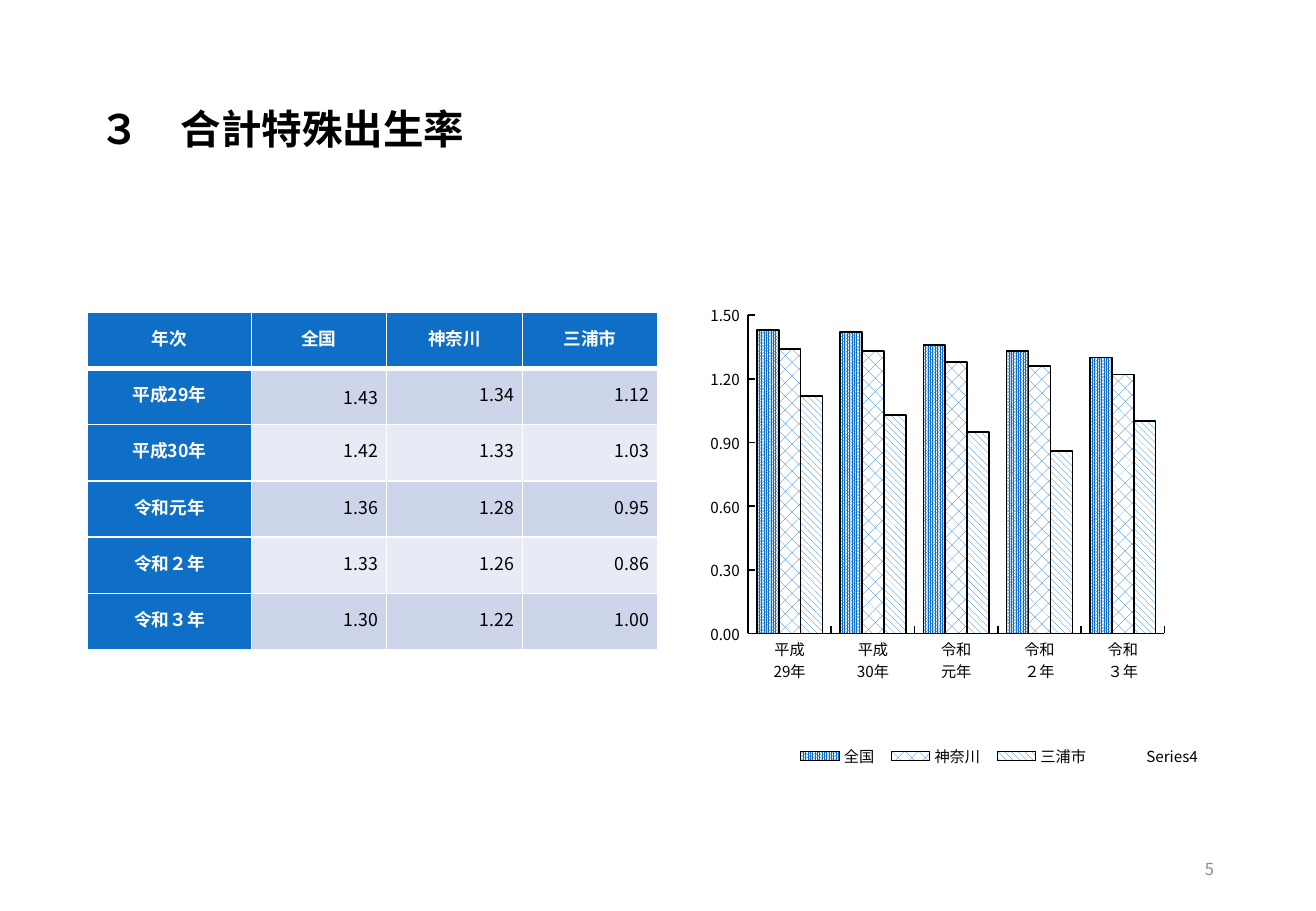
from lxml import etree
from pptx import Presentation
from pptx.chart.data import CategoryChartData
from pptx.dml.color import RGBColor
from pptx.enum.chart import XL_CHART_TYPE, XL_LEGEND_POSITION, XL_TICK_MARK
from pptx.enum.dml import MSO_PATTERN
from pptx.enum.text import MSO_ANCHOR, MSO_AUTO_SIZE, PP_ALIGN
from pptx.oxml import parse_xml
from pptx.oxml.ns import nsdecls, qn
from pptx.util import Inches, Pt

FONT = "Noto Sans CJK JP"
BLACK = RGBColor(0x00, 0x00, 0x00)
WHITE = RGBColor(0xFF, 0xFF, 0xFF)
GRAY = RGBColor(0x8C, 0x8C, 0x8C)
BLUE = RGBColor(0x0F, 0x6F, 0xC6)
BAND_DARK = RGBColor(0xCC, 0xD5, 0xEA)
BAND_LIGHT = RGBColor(0xE7, 0xEB, 0xF5)

LEFT, CENTER, RIGHT = PP_ALIGN.LEFT, PP_ALIGN.CENTER, PP_ALIGN.RIGHT
MIDDLE = MSO_ANCHOR.MIDDLE
NO_AUTOFIT = MSO_AUTO_SIZE.NONE
TICK_INSIDE, TICK_NONE = XL_TICK_MARK.INSIDE, XL_TICK_MARK.NONE
CLUSTERED = XL_CHART_TYPE.COLUMN_CLUSTERED
LEGEND_RIGHT = XL_LEGEND_POSITION.RIGHT
PATTERNS = [MSO_PATTERN.PERCENT_90, MSO_PATTERN.PERCENT_25,
            MSO_PATTERN.WIDE_DOWNWARD_DIAGONAL]

YEARS = ["平成29年", "平成30年", "令和元年", "令和２年", "令和３年"]
RATES = {
    "全国": [1.43, 1.42, 1.36, 1.33, 1.30],
    "神奈川": [1.34, 1.33, 1.28, 1.26, 1.22],
    "三浦市": [1.12, 1.03, 0.95, 0.86, 1.00],
}
EMPTY_SERIES = "Series4"

SECOND_AXES = f"""<c:plotArea {nsdecls("c")}>
<c:lineChart><c:grouping val="standard"/><c:varyColors val="0"/>
<c:marker val="1"/><c:axId val="5001"/><c:axId val="5002"/></c:lineChart>
<c:catAx><c:axId val="5001"/><c:scaling><c:orientation val="minMax"/></c:scaling>
<c:delete val="1"/><c:axPos val="b"/><c:crossAx val="5002"/></c:catAx>
<c:valAx><c:axId val="5002"/><c:scaling><c:orientation val="minMax"/></c:scaling>
<c:delete val="1"/><c:axPos val="r"/><c:crossAx val="5001"/><c:crosses val="max"/></c:valAx>
</c:plotArea>"""


def set_all(target, values):
    for name, value in values.items():
        setattr(target, name, value)


def manual_layout(x, y, w, h, inner=False):
    target = '<c:layoutTarget val="inner"/>' if inner else ""
    return parse_xml(
        f'<c:layout {nsdecls("c")}><c:manualLayout>{target}'
        '<c:xMode val="edge"/><c:yMode val="edge"/>'
        f'<c:x val="{x}"/><c:y val="{y}"/><c:w val="{w}"/><c:h val="{h}"/>'
        '</c:manualLayout></c:layout>')


def move_to_second_axis(plot_area, series):
    """Turn the bar series into a line series on hidden second axes."""
    line_chart, category_axis, value_axis = parse_xml(SECOND_AXES)
    for flag in series.findall(qn("c:invertIfNegative")):
        series.remove(flag)
    marker = parse_xml(f'<c:marker {nsdecls("c")}><c:symbol val="none"/></c:marker>')
    series.find(qn("c:spPr")).addnext(marker)
    etree.SubElement(series, qn("c:smooth"), val="0")
    line_chart.insert(2, series)
    plot_area.find(qn("c:barChart")).addnext(line_chart)
    plot_area.findall(qn("c:valAx"))[-1].addnext(category_axis)
    category_axis.addnext(value_axis)


class SlideBuilder:
    def __init__(self, slide):
        self.slide = slide

    def style(self, font, size, color=BLACK, bold=False):
        set_all(font, {"name": FONT, "size": Pt(size), "bold": bold})
        font.color.rgb = color
        etree.SubElement(font._rPr, qn("a:ea"), typeface=FONT)

    def add_text(self, frame, text, size, align, color=BLACK, bold=False):
        paragraph = frame.paragraphs[0]
        paragraph.alignment = align
        run = paragraph.add_run()
        run.text = text
        self.style(run.font, size, color, bold)
        return paragraph

    def title(self, text, left, top, width, height):
        heading = self.slide.shapes.title
        set_all(heading, {"left": left, "top": top, "width": width, "height": height})
        set_all(heading.text_frame, {"word_wrap": False, "auto_size": NO_AUTOFIT,
                                     "vertical_anchor": MIDDLE})
        self.add_text(heading.text_frame, text, 24, LEFT, bold=True)

    def page_number(self, text, left, top, width, height):
        frame = self.slide.shapes.add_textbox(left, top, width, height).text_frame
        set_all(frame, {"word_wrap": True, "vertical_anchor": MIDDLE})
        self.add_text(frame, text, 9.8, RIGHT, GRAY)

    def cell(self, cell, text, fill, is_header, borders):
        set_all(cell, {"margin_left": Inches(0.07), "margin_right": Inches(0.07),
                       "margin_top": 0, "margin_bottom": 0, "vertical_anchor": MIDDLE})
        properties = cell._tc.get_or_add_tcPr()
        for side, points in borders.items():
            properties.append(parse_xml(
                f'<a:ln{side} {nsdecls("a")} w="{Pt(points)}"><a:solidFill>'
                f'<a:srgbClr val="{WHITE}"/></a:solidFill></a:ln{side}>'))
        cell.fill.solid()
        cell.fill.fore_color.rgb = fill
        align, color = (CENTER, WHITE) if is_header else (RIGHT, BLACK)
        return self.add_text(cell.text_frame, text, 10.5, align, color, is_header)

    def rate_table(self, left, top, column_widths, height):
        rows = [["年次", *RATES]]
        for year, *rates in zip(YEARS, *RATES.values()):
            rows.append([year, *(f"{rate:.2f}" for rate in rates)])
        table = self.slide.shapes.add_table(
            len(rows), len(rows[0]), left, top, sum(column_widths), height).table
        for column, width in zip(table.columns, column_widths):
            column.width = width
        for r, row in enumerate(rows):
            band = BAND_DARK if r % 2 else BAND_LIGHT
            borders = {"L": 1, "R": 1, "T": 3 if r == 1 else 1, "B": 3 if r == 0 else 1}
            for c, text in enumerate(row):
                is_header = r == 0 or c == 0
                paragraph = self.cell(table.cell(r, c), text,
                                      BLUE if is_header else band, is_header, borders)
                if (r, c) != (1, 1):
                    paragraph.line_spacing = Pt(12)

    def outline(self, line, color):
        line.color.rgb = color
        line.width = Pt(1)

    def axis(self, axis, values):
        set_all(axis, {"has_major_gridlines": False, "major_tick_mark": TICK_INSIDE,
                       "minor_tick_mark": TICK_NONE, **values})
        self.outline(axis.format.line, BLACK)
        self.style(axis.tick_labels.font, 9)

    def rate_chart(self, left, top, width, height):
        data = CategoryChartData(number_format="0.00")
        data.categories = [f"{year[:2]}\n{year[2:]}" for year in YEARS]
        for name, rates in RATES.items():
            data.add_series(name, rates)
        data.add_series(EMPTY_SERIES, [None] * len(YEARS))
        chart = self.slide.shapes.add_chart(
            CLUSTERED, left, top, width, height, data).chart
        set_all(chart, {"has_title": False, "has_legend": True})
        self.style(chart.font, 10)

        bars = chart.plots[0]
        set_all(bars, {"gap_width": 80, "overlap": 0, "vary_by_categories": False})
        *regions, empty = bars.series
        for region, pattern in zip(regions, PATTERNS):
            fill = region.format.fill
            fill.patterned()
            fill.pattern = pattern
            fill.fore_color.rgb = BLUE
            fill.back_color.rgb = WHITE
            self.outline(region.format.line, BLACK)
        self.outline(empty.format.line, WHITE)

        self.axis(chart.category_axis, {})
        self.axis(chart.value_axis, {"minimum_scale": 0, "maximum_scale": 1.5,
                                     "major_unit": 0.3})
        set_all(chart.value_axis.tick_labels, {
            "number_format": r"#,##0.00_);[Red]\(#,##0.00\)",
            "number_format_is_linked": False})

        set_all(chart.legend, {"position": LEGEND_RIGHT, "include_in_layout": False})
        self.style(chart.legend.font, 9)
        legend = chart.element.find(f".//{qn('c:legend')}")
        for layout in legend.findall(qn("c:layout")):
            legend.remove(layout)
        legend.find(qn("c:legendPos")).addnext(manual_layout(0.17, 0.92, 0.83, 0.06))

        plot_area = chart.element.find(f".//{qn('c:plotArea')}")
        for layout in plot_area.findall(qn("c:layout")):
            plot_area.remove(layout)
        plot_area.insert(0, manual_layout(0.09, 0.12, 0.82, 0.6, inner=True))
        move_to_second_axis(plot_area, plot_area.findall(f".//{qn('c:ser')}")[-1])


def main():
    deck = Presentation()
    set_all(deck, {"slide_width": Inches(10.83), "slide_height": Inches(7.5)})
    title_only = deck.slide_layouts[5]
    page = SlideBuilder(deck.slides.add_slide(title_only))
    page.page_number("5", Inches(7.65), Inches(6.95), Inches(2.44), Inches(0.4))
    page.title("３　合計特殊出生率", Inches(0.72), Inches(0.81), Inches(3.23), Inches(0.5))
    page.rate_table(Inches(0.72), Inches(2.57),
                    [Inches(w) for w in (1.35, 1.11, 1.12, 1.11)], Inches(2.78))
    page.rate_chart(Inches(5.78), Inches(2.07), Inches(4.18), Inches(4.37))
    deck.save("out.pptx")


if __name__ == "__main__":
    main()
